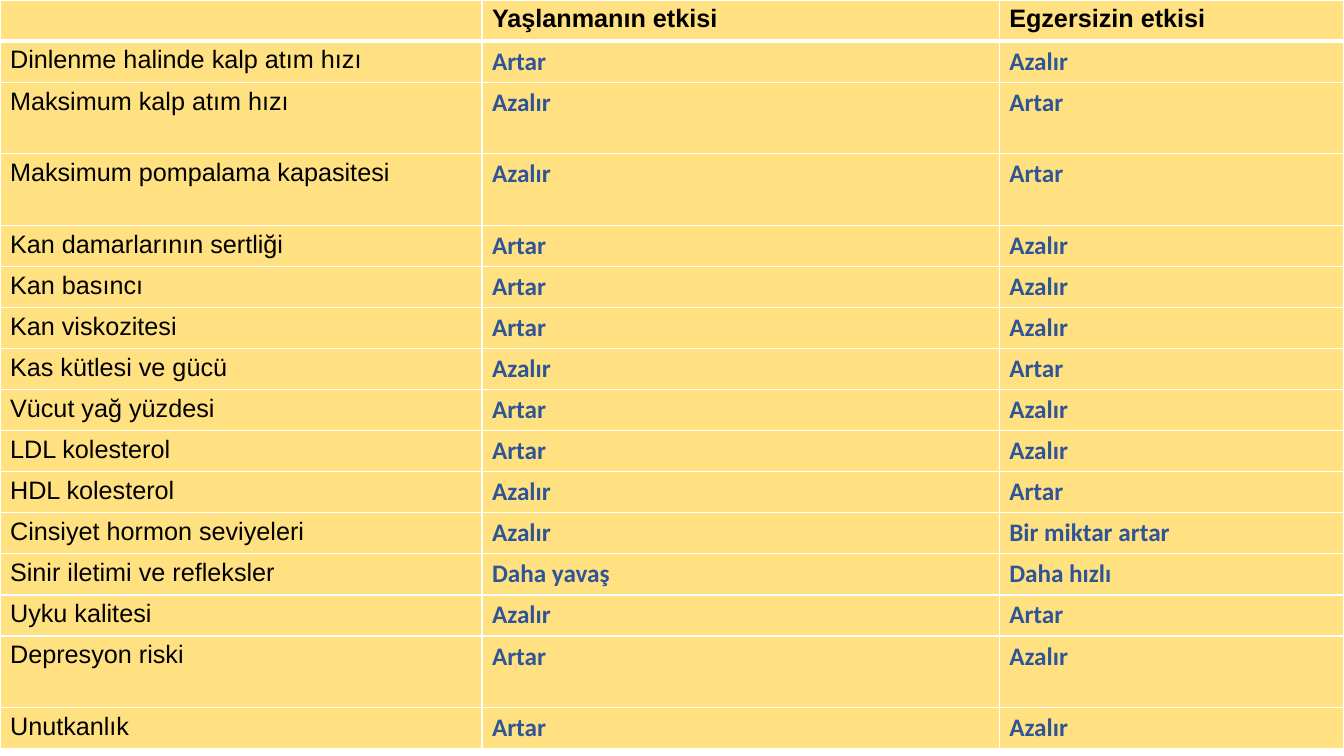
from lxml.etree import SubElement
from pptx import Presentation
from pptx.dml.color import RGBColor
from pptx.oxml.ns import qn
from pptx.util import Inches, Pt

COLORS = {"cell": "FFE181", "border": "FFFFFF", "label": "000000", "effect": "2F5597"}

effects = [
    ("", "Yaşlanmanın etkisi", "Egzersizin etkisi"),
    ("Dinlenme halinde kalp atım hızı", "Artar", "Azalır"),
    ("Maksimum kalp atım hızı", "Azalır", "Artar"),
    ("Maksimum pompalama kapasitesi", "Azalır", "Artar"),
    ("Kan damarlarının sertliği", "Artar", "Azalır"),
    ("Kan basıncı", "Artar", "Azalır"),
    ("Kan viskozitesi", "Artar", "Azalır"),
    ("Kas kütlesi ve gücü", "Azalır", "Artar"),
    ("Vücut yağ yüzdesi", "Artar", "Azalır"),
    ("LDL kolesterol", "Artar", "Azalır"),
    ("HDL kolesterol", "Azalır", "Artar"),
    ("Cinsiyet hormon seviyeleri", "Azalır", "Bir miktar artar"),
    ("Sinir iletimi ve refleksler", "Daha yavaş", "Daha hızlı"),
    ("Uyku kalitesi", "Azalır", "Artar"),
    ("Depresyon riski", "Artar", "Azalır"),
    ("Unutkanlık", "Artar", "Azalır"),
]
column_widths = [4.78, 5.13, 3.42]
table_height = 7.43
tall_rows = {2, 3, 14}
tall_height = 0.71
row_height = (table_height - tall_height * len(tall_rows)) / (len(effects) - len(tall_rows))


def add_border(cell, side, points):
    line = SubElement(cell._tc.get_or_add_tcPr(), qn(f"a:ln{side}"), w=str(Pt(points)))
    fill = SubElement(line, qn("a:solidFill"))
    SubElement(fill, qn("a:srgbClr"), val=COLORS["border"])


presentation = Presentation()
presentation.slide_width = Inches(13.33)
presentation.slide_height = Inches(7.5)
slide = presentation.slides.add_slide(presentation.slide_layouts[6])

# Table size
comparison = slide.shapes.add_table(
    len(effects), len(column_widths), 0, 0, Inches(13.33), Inches(table_height)
).table
comparison.horz_banding = False
for column, width in zip(comparison.columns, column_widths):
    column.width = Inches(width)

# Cells: black headings and labels, blue effects
for row, texts in enumerate(effects):
    comparison.rows[row].height = Inches(tall_height if row in tall_rows else row_height)
    for col, text in enumerate(texts):
        cell = comparison.cell(row, col)
        for side in "LRTB":
            under_header = (row, side) in {(0, "B"), (1, "T")}
            add_border(cell, side, 3 if under_header else 1)
        cell.fill.solid()
        cell.fill.fore_color.rgb = RGBColor.from_string(COLORS["cell"])

        is_effect = row > 0 and col > 0
        cell.text_frame.text = text
        font = cell.text_frame.paragraphs[0].font
        font.size = Pt(18)
        for run in cell.text_frame.paragraphs[0].runs:
            run.font.size = Pt(18)
            run.font.name = "Calibri" if is_effect else "Arial"
            run.font.bold = row == 0 or col > 0
            run.font.color.rgb = RGBColor.from_string(COLORS["effect" if is_effect else "label"])

presentation.save("out.pptx")
